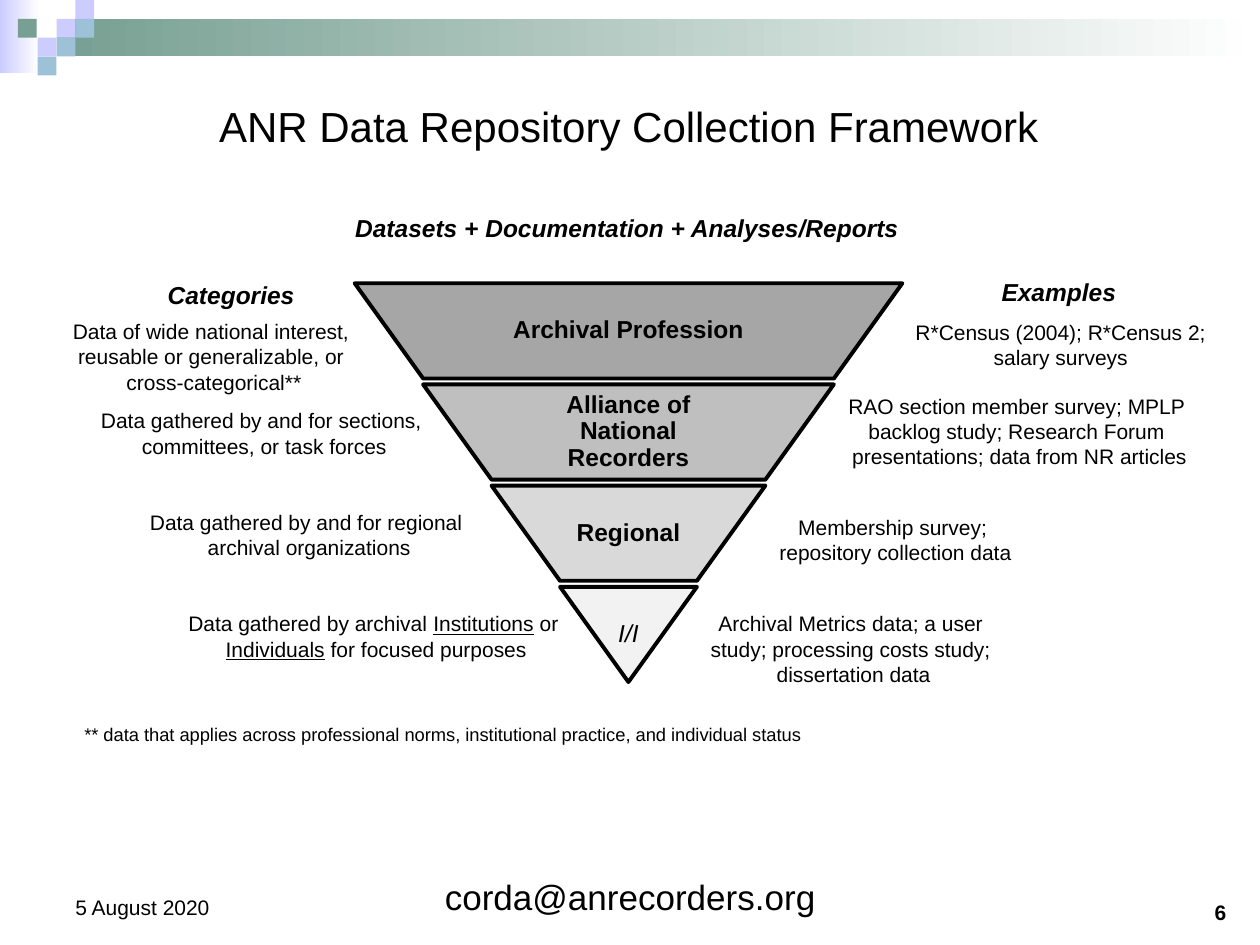
from pptx import Presentation
from pptx.dml.color import RGBColor
from pptx.enum.shapes import MSO_SHAPE
from pptx.enum.text import MSO_ANCHOR, MSO_AUTO_SIZE, PP_ALIGN
from pptx.util import Cm, Pt

RECTANGLE, TRAPEZOID = MSO_SHAPE.RECTANGLE, MSO_SHAPE.TRAPEZOID
TOP, MIDDLE, BOTTOM = MSO_ANCHOR.TOP, MSO_ANCHOR.MIDDLE, MSO_ANCHOR.BOTTOM
LEFT, CENTER, RIGHT = PP_ALIGN.LEFT, PP_ALIGN.CENTER, PP_ALIGN.RIGHT
FIT_SHAPE = MSO_AUTO_SIZE.SHAPE_TO_FIT_TEXT

BLACK = RGBColor(0x00, 0x00, 0x00)
WHITE = RGBColor(0xFF, 0xFF, 0xFF)
LAVENDER = RGBColor(0xCC, 0xCC, 0xFF)
GREEN = RGBColor(0x77, 0x9F, 0x92)
SKY = RGBColor(0x9D, 0xC2, 0xD7)
GREYS = [RGBColor(level, level, level) for level in (0xA6, 0xBF, 0xD9, 0xF2)]

TILE = 0.38
TILES = [(3, 1, LAVENDER), (4, 0, LAVENDER), (4, 1, SKY), (2, 2, LAVENDER),
         (0.95, 1, GREEN), (3, 2, SKY), (2, 3, SKY)]

FUNNEL_CENTER, FUNNEL_TOP = 12.67, 5.71
BAND_STEP, BAND_HEIGHT, BAND_PITCH = 2.76, 1.92, 2.04
BOLD, ITALIC = {"bold": True}, {"italic": True}
BANDS = [("Archival Profession", BOLD), ("Alliance of National Recorders", BOLD),
         ("Regional", BOLD), ("I/I", ITALIC)]

HEADINGS = [
    (6.91, 4.17, 11.51, "Datasets + Documentation + Analyses/Reports"),
    (3.13, 5.52, 3.07, "Categories"),
    (19.94, 5.46, 2.84, "Examples"),
]
NOTES = [
    (1.19, 6.3, 6.25, ["Data of wide national interest, ", "reusable or generalizable, or ",
                       "cross-categorical**"]),
    (1.75, 8.1, 7.16, ["Data gathered by and for sections, ", "committees, or task forces"]),
    (2.74, 10.14, 6.99, ["Data gathered by and for regional ", "archival organizations"]),
    (3.51, 12.19, 8.15, ["Data gathered by archival _Institutions_ or ",
                         "_Individuals_ for focused purposes"]),
    (18.16, 6.32, 6.45, ["R*Census (2004); R*Census 2; ", "salary surveys"]),
    (16.81, 7.81, 7.49, ["RAO section member survey; MPLP ", "backlog study; Research Forum ",
                         "presentations; data from NR articles"]),
    (15.44, 10.25, 5.23, ["Membership survey; ", "repository collection data"]),
    (14.05, 12.19, 6.32, ["Archival Metrics data; a user ", "study; processing costs study; ",
                          "dissertation data"]),
]


def apply_format(target, values):
    """Set each named attribute on the target."""
    for name, value in values.items():
        setattr(target, name, value)


def write_text(shape, lines, size, alignment=LEFT, spacing=None, frame=None, font=None):
    """Write one paragraph per line, underlining what stands between underscores."""
    text_frame = shape.text_frame
    apply_format(text_frame, frame or {})
    for index, line in enumerate(lines):
        paragraph = text_frame.add_paragraph() if index else text_frame.paragraphs[0]
        apply_format(paragraph, {"alignment": alignment, "line_spacing": spacing})
        for part, text in enumerate(line.split("_")):
            if text:
                run = paragraph.add_run()
                run.text = text
                run.font.color.rgb = BLACK
                apply_format(run.font, {"name": "Arial", "size": Pt(size), **(font or {})})
                if part % 2:
                    run.font.underline = True


def add_text(slide, box, lines, size, alignment=LEFT, anchor=TOP, wrap=False, font=None):
    """Add a text box, fitted to its lines unless it wraps."""
    shape = slide.shapes.add_textbox(*map(Cm, box))
    frame = {"word_wrap": wrap, "vertical_anchor": anchor}
    if not wrap:
        frame["auto_size"] = FIT_SHAPE
    write_text(shape, lines, size, alignment, frame=frame, font=font)


def add_rectangle(slide, box, color, fade=False):
    """Add an unlined rectangle, plain or fading to white."""
    shape = slide.shapes.add_shape(RECTANGLE, *map(Cm, box))
    shape.shadow.inherit = False
    shape.line.fill.background()
    if fade:
        shape.fill.gradient()
        shape.fill.gradient_angle = 0
        for stop, stop_color in zip(shape.fill.gradient_stops, (color, WHITE)):
            stop.color.rgb = stop_color
    else:
        shape.fill.solid()
        shape.fill.fore_color.rgb = color
    return shape


def add_banner(slide):
    """Add the fading bars and the tiles at the top."""
    add_rectangle(slide, (0, 0, 0.79, 1.47), LAVENDER, fade=True)
    add_rectangle(slide, (1.14, TILE, 24.26, 2 * TILE), GREEN, fade=True)
    for column, row, color in TILES:
        add_rectangle(slide, (column * TILE, row * TILE, TILE, TILE), color)


def add_band_outline(slide, index):
    """Add the outline of one funnel band, narrowing downwards."""
    width = BAND_STEP * (len(BANDS) - index)
    left, top = FUNNEL_CENTER - width / 2, FUNNEL_TOP + BAND_PITCH * index
    if index == 0:
        shape = slide.shapes.add_shape(TRAPEZOID, *map(Cm, (left, top, width, BAND_HEIGHT)))
        shape.adjustments[0] = BAND_STEP / 2 / BAND_HEIGHT
        shape.rotation = 180
    else:
        right, bottom, inset = left + width, top + BAND_HEIGHT, BAND_STEP / 2
        builder = slide.shapes.build_freeform(Cm(right), Cm(top))
        corners = [(right - inset, bottom), (left + inset, bottom), (left, top)]
        builder.add_line_segments([(Cm(x), Cm(y)) for x, y in corners])
        shape = builder.convert_to_shape()
    shape.shadow.inherit = False
    shape.fill.solid()
    shape.fill.fore_color.rgb = GREYS[index]
    shape.line.color.rgb = BLACK
    shape.line.width = Pt(2.25)
    return shape, width


def add_funnel(slide):
    """Add the four labelled bands of the funnel."""
    for index, (label, font) in enumerate(BANDS):
        shape, width = add_band_outline(slide, index)
        margin = 0.1 if index == len(BANDS) - 1 else 0.26 * width
        if index == 0:
            shape = add_rectangle(slide, (9.29, 5.99, 6.76, 1.35), GREYS[0])
            margin = 0.18
        frame = {"word_wrap": True, "vertical_anchor": MIDDLE,
                 "margin_left": Cm(margin), "margin_right": Cm(margin),
                 "margin_top": Cm(0.1), "margin_bottom": Cm(0.1)}
        write_text(shape, [label], 14, CENTER, 0.9, frame, font)


def main():
    """Build and save the slide."""
    presentation = Presentation()
    apply_format(presentation, {"slide_width": Cm(25.4), "slide_height": Cm(19.05)})
    slide = presentation.slides.add_slide(presentation.slide_layouts[6])
    add_banner(slide)
    add_funnel(slide)
    add_text(slide, (1.73, 1.85, 21.89, 1.37), ["ANR Data Repository Collection Framework"],
             24, CENTER, MIDDLE, wrap=True)
    for left, top, width, heading in HEADINGS:
        add_text(slide, (left, top, width, 0.86), [heading], 14, font={**BOLD, **ITALIC})
    for left, top, width, lines in NOTES:
        add_text(slide, (left, top, width, 0.25 + 0.51 * len(lines)), lines, 12, CENTER)
    add_text(slide, (1.45, 14.45, 15.24, 0.71),
             ["** data that applies across professional norms, institutional practice, "
              "and individual status"], 10.5)
    add_text(slide, (1.27, 17.35, 5.92, 1.32), ["5 August 2020"], 12, LEFT, BOTTOM, wrap=True)
    add_text(slide, (8.68, 17.35, 8.05, 1.27), ["corda@anrecorders.org"],
             20, CENTER, BOTTOM, wrap=True)
    add_text(slide, (19.05, 17.45, 5.92, 1.32), ["6"], 12, RIGHT, BOTTOM, wrap=True, font=BOLD)
    presentation.save("out.pptx")


if __name__ == "__main__":
    main()
